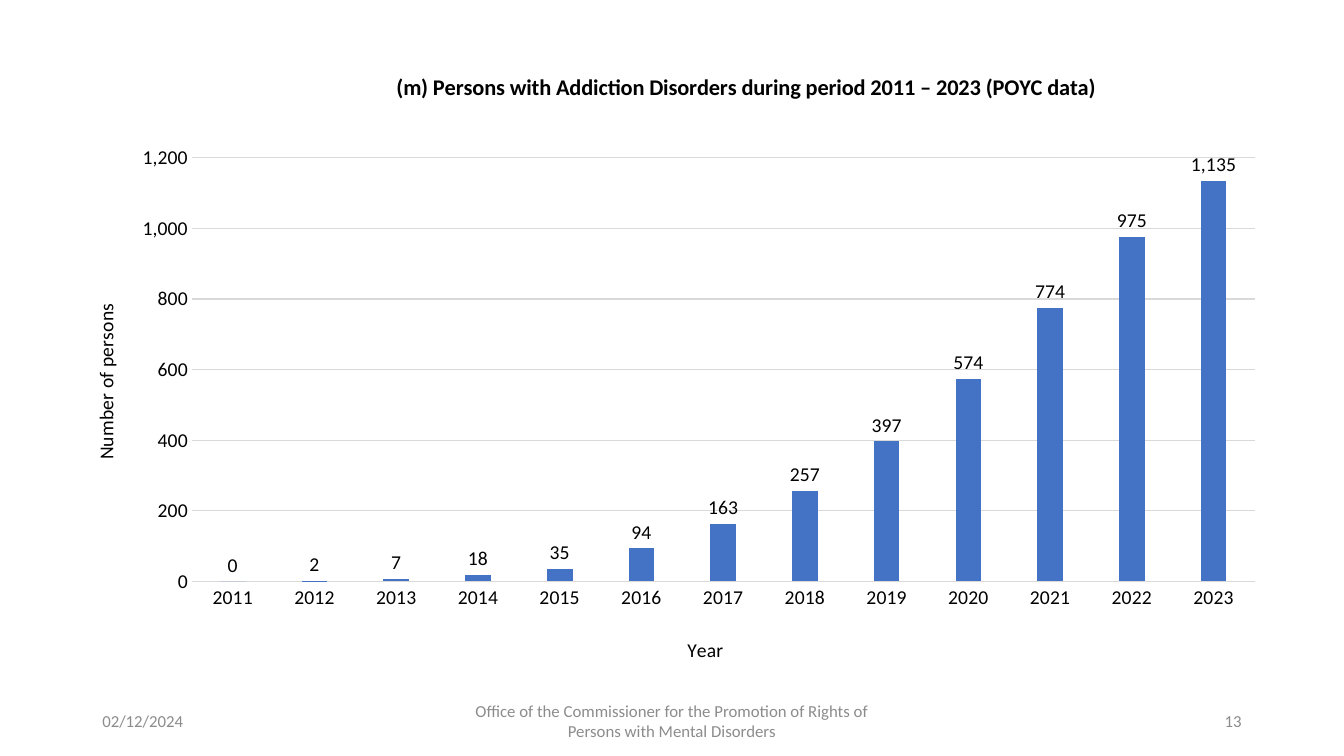
"""Build a slide charting persons with addiction disorders from 2011 to 2023."""
from dataclasses import dataclass

from lxml import etree
from pptx import Presentation
from pptx import util as u
from pptx.chart import data
from pptx.dml import color
from pptx.enum import chart as charts, text
from pptx.oxml import ns

COLOURS = {"ink": "000000", "muted": "8C8C8C", "bar": "4472C4", "grid": "D9D9D9"}
FONT = "Calibri"
YEARS = [str(year) for year in range(2011, 2024)]
PERSONS = [0, 2, 7, 18, 35, 94, 163, 257, 397, 574, 774, 975, 1135]
TITLE = "(m) Persons with Addiction Disorders during period 2011 – 2023 (POYC data)"


@dataclass
class Footer:
    left: float
    width: float
    words: str
    align: text.PP_ALIGN


@dataclass
class Heading:
    holder: object
    words: str
    size: float
    bold: bool
    x: float
    y: float


FOOTERS = [
    Footer(66, 216, "02/12/2024", text.PP_ALIGN.LEFT),
    Footer(318, 324, "Office of the Commissioner for the Promotion of Rights of "
           "Persons with Mental Disorders", text.PP_ALIGN.CENTER),
    Footer(678, 216, "13", text.PP_ALIGN.RIGHT),
]


def style(font, size: float, colour: str, bold: bool = False) -> None:
    font.name = FONT
    font.size = u.Pt(size)
    font.bold = bold
    font.color.rgb = color.RGBColor.from_string(COLOURS[colour])


def style_line(line) -> None:
    line.color.rgb = color.RGBColor.from_string(COLOURS["grid"])
    line.width = u.Pt(0.75)


def make_layout(**settings: object) -> etree.Element:
    layout = etree.Element(ns.qn("c:layout"))
    manual = etree.SubElement(layout, ns.qn("c:manualLayout"))
    for name, value in settings.items():
        etree.SubElement(manual, ns.qn(f"c:{name}")).set("val", str(value))
    return layout


def drop_layout(parent) -> None:
    for layout in parent.findall(ns.qn("c:layout")):
        parent.remove(layout)


def draw_heading(heading: Heading) -> None:
    para = heading.holder.text_frame.paragraphs[0]
    span = para.add_run()
    span.text = heading.words
    style(span.font, heading.size, "ink", heading.bold)
    element = heading.holder.element
    drop_layout(element)
    element.find(ns.qn("c:tx")).addnext(
        make_layout(xMode="edge", yMode="edge", x=heading.x, y=heading.y))


def draw_footer(page, footer: Footer) -> None:
    box = page.shapes.add_textbox(
        u.Pt(footer.left), u.Pt(500.5), u.Pt(footer.width), u.Pt(28.75))
    frame = box.text_frame
    frame.word_wrap = True
    frame.vertical_anchor = text.MSO_ANCHOR.MIDDLE
    para = frame.paragraphs[0]
    para.alignment = footer.align
    span = para.add_run()
    span.text = footer.words
    style(span.font, 12, "muted")


def draw_chart(page) -> None:
    figures = data.CategoryChartData(number_format="#,##0")
    figures.categories = YEARS
    figures.add_series("Series 1", PERSONS)
    chart = page.shapes.add_chart(
        charts.XL_CHART_TYPE.COLUMN_CLUSTERED,
        u.Pt(46), u.Pt(35.25), u.Pt(867.5), u.Pt(447.75), figures).chart
    style(chart.font, 14, "ink")
    chart.has_legend = False
    chart.has_title = True

    plot = chart.plots[0]
    plot.gap_width = 219
    plot.overlap = -27
    plot.vary_by_categories = False
    fill = plot.series[0].format.fill
    fill.solid()
    fill.fore_color.rgb = color.RGBColor.from_string(COLOURS["bar"])
    plot.has_data_labels = True
    labels = plot.data_labels
    labels.show_value = True
    labels.position = charts.XL_LABEL_POSITION.OUTSIDE_END
    style(labels.font, 14, "ink")

    years, persons = chart.category_axis, chart.value_axis
    for axis in (years, persons):
        axis.major_tick_mark = charts.XL_TICK_MARK.NONE
        axis.minor_tick_mark = charts.XL_TICK_MARK.NONE
        style(axis.tick_labels.font, 14, "ink")
    style_line(years.format.line)
    persons.format.line.fill.background()
    persons.has_major_gridlines = True
    style_line(persons.major_gridlines.format.line)
    persons.minimum_scale = 0
    persons.maximum_scale = 1200
    persons.major_unit = 200
    persons.tick_labels.number_format = "#,##0"
    persons.tick_labels.number_format_is_linked = False

    for heading in (
        Heading(chart.chart_title, TITLE, 16, True, 0.27, 0.03),
        Heading(years.axis_title, "Year", 14, False, 0.51, 0.93),
        Heading(persons.axis_title, "Number of persons", 14, False, 0.02, 0.4),
    ):
        draw_heading(heading)

    area = chart.element.find(f".//{ns.qn('c:plotArea')}")
    drop_layout(area)
    area.insert(0, make_layout(layoutTarget="inner", xMode="edge", yMode="edge",
                               x=0.105, y=0.173, w=0.875, h=0.676))


def main() -> None:
    deck = Presentation()
    deck.slide_width, deck.slide_height = u.Pt(960), u.Pt(540)
    page = deck.slides.add_slide(deck.slide_layouts[6])
    for footer in FOOTERS:
        draw_footer(page, footer)
    draw_chart(page)
    deck.save("out.pptx")


if __name__ == "__main__":
    main()
